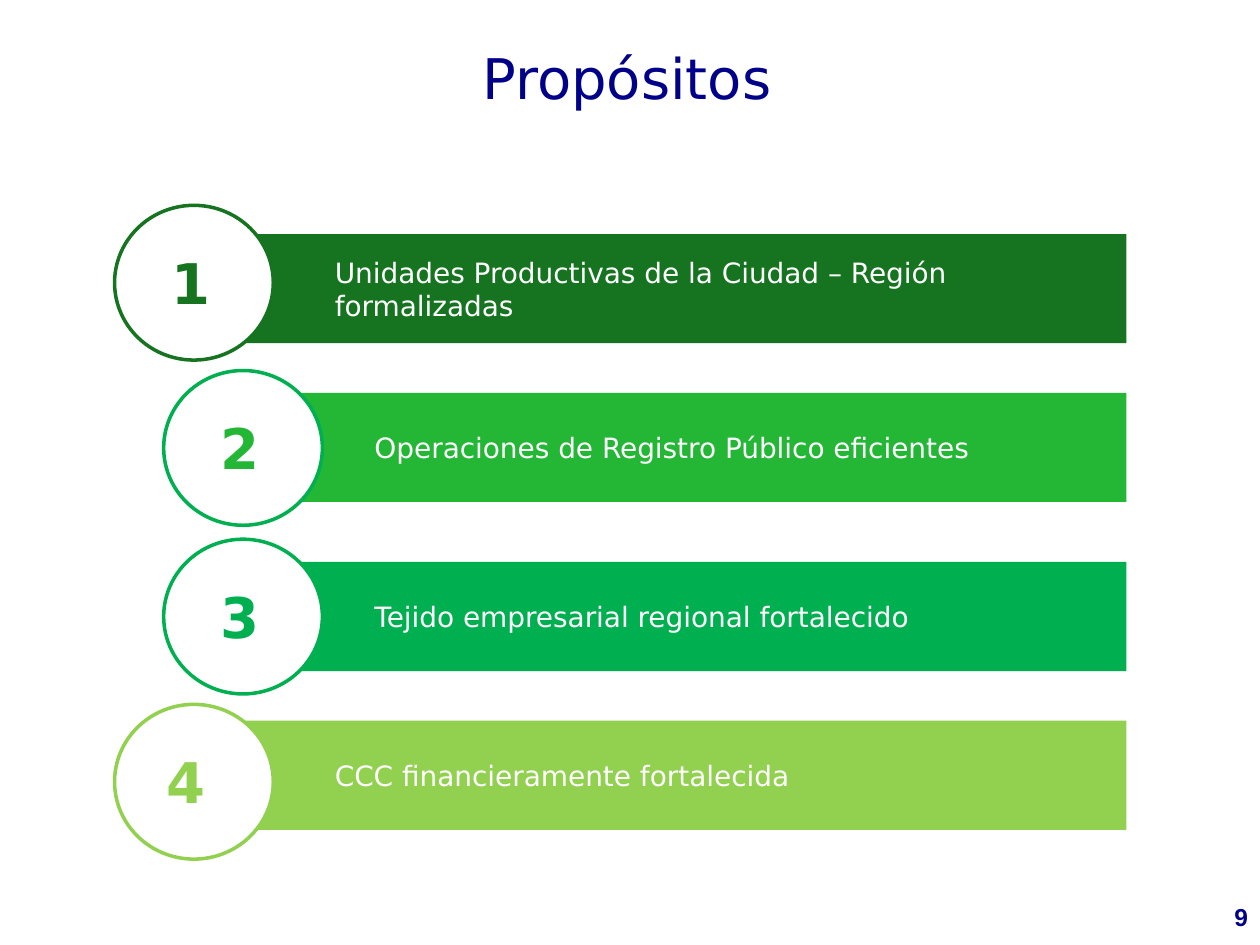
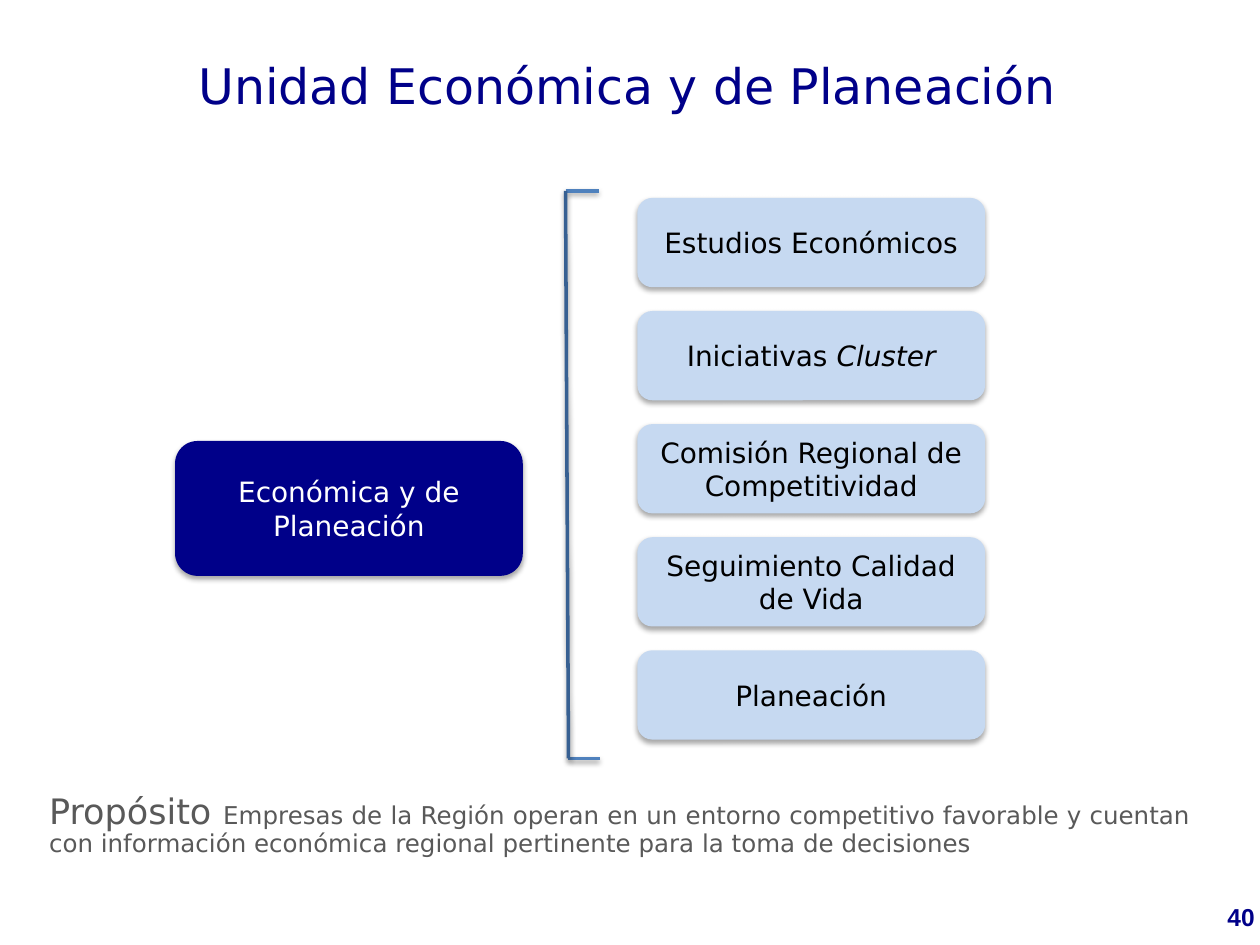
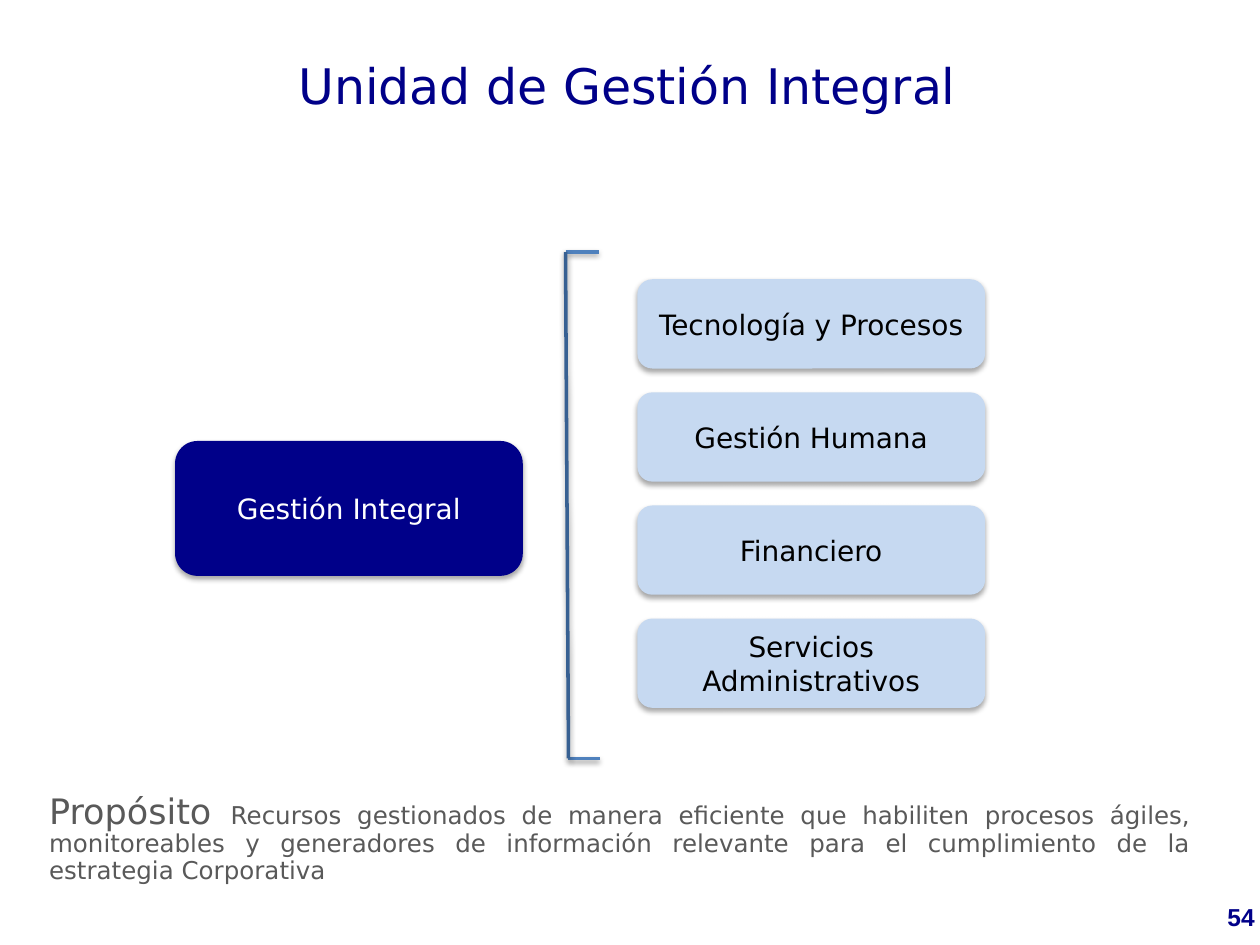
from lxml import etree
from pptx import Presentation
from pptx.dml.color import RGBColor
from pptx.enum.shapes import MSO_CONNECTOR, MSO_SHAPE
from pptx.enum.text import MSO_ANCHOR, MSO_AUTO_SIZE, PP_ALIGN
from pptx.oxml.ns import qn
from pptx.util import Cm, Pt

LEFT, CENTER, JUSTIFY = PP_ALIGN.LEFT, PP_ALIGN.CENTER, PP_ALIGN.JUSTIFY
TOP, MIDDLE = MSO_ANCHOR.TOP, MSO_ANCHOR.MIDDLE
RECT, ROUNDED = MSO_SHAPE.RECTANGLE, MSO_SHAPE.ROUNDED_RECTANGLE
CIRCLE = MSO_SHAPE.FLOWCHART_CONNECTOR
STRAIGHT = MSO_CONNECTOR.STRAIGHT

# Colours
NAVY = RGBColor(0x00, 0x00, 0x89)
WHITE = RGBColor(0xFF, 0xFF, 0xFF)
BLACK = RGBColor(0x00, 0x00, 0x00)
GREY = RGBColor(0x59, 0x59, 0x59)
PALE_BLUE = RGBColor(0xC6, 0xD9, 0xF1)
ARM_BLUE = RGBColor(0x4F, 0x81, 0xBD)
SPINE_BLUE = RGBColor(0x37, 0x60, 0x92)
DARK_GREEN = RGBColor(0x16, 0x74, 0x21)
GREEN = RGBColor(0x23, 0xB7, 0x35)
EMERALD = RGBColor(0x00, 0xB0, 0x50)
LIME = RGBColor(0x92, 0xD0, 0x50)

# Text formats
BASE = {"name": "DejaVu Sans", "size": Pt(16), "bold": False, "italic": False}
NUMERAL = {"size": Pt(32), "bold": True}
PAGE_NUMBER = {"name": "Arial", "size": Pt(14), "bold": True}

# Content: lengths in cm
PURPOSES = {
    "title": "Propósitos", "page": "9",
    # caption, bar colour, ring colour, bar top, circle top, circle left, numeral left, caption left
    "rows": [
        ("Unidades Productivas de la Ciudad – Región formalizadas",
         DARK_GREEN, DARK_GREEN, 4.72, 4.14, 2.31, 3.2, 6.5),
        ("Operaciones de Registro Público eficientes",
         GREEN, EMERALD, 7.92, 7.47, 3.3, 4.19, 7.3),
        ("Tejido empresarial regional fortalecido",
         EMERALD, EMERALD, 11.33, 10.87, 3.3, 4.19, 7.3),
        ("CCC financieramente fortalecida",
         LIME, LIME, 14.53, 14.2, 2.31, 3.1, 6.5),
    ],
}
UNITS = [
    {
        "title": "Unidad Económica y de Planeación", "page": "40",
        "unit": "Económica y de Planeación",
        "areas": [
            [("Estudios Económicos", {})],
            [("Iniciativas ", {}), ("Cluster", {"italic": True})],
            [("Comisión Regional de Competitividad", {})],
            [("Seguimiento Calidad de Vida", {})],
            [("Planeación", {})],
        ],
        "bracket_top": 3.85, "areas_top": 3.99,
        "purpose": "Empresas de la Región operan en un entorno competitivo favorable y "
                   "cuentan con información económica regional pertinente para la toma "
                   "de decisiones",
    },
    {
        "title": "Unidad de Gestión Integral", "page": "54",
        "unit": "Gestión Integral",
        "areas": [[(area, {})] for area in (
            "Tecnología y Procesos", "Gestión Humana", "Financiero",
            "Servicios Administrativos")],
        "bracket_top": 5.08, "areas_top": 5.63,
        "purpose": "Recursos gestionados de manera eficiente que habiliten procesos ágiles, "
                   "monitoreables y generadores de información relevante para el "
                   "cumplimiento de la estrategia Corporativa",
    },
]

# Shared measures
BAR_LEFT, BAR_WIDTH, BAR_HEIGHT = 4.7, 18.01, 2.2
CIRCLE_WIDTH, CIRCLE_HEIGHT = 3.2, 3.12
AREA_HEIGHT, AREA_PITCH = 1.8, 2.28
BRACKET_BOTTOM = 15.29


def cm(*lengths):
    return [Cm(length) for length in lengths]


def write(frame, runs, color, align=LEFT, anchor=TOP, spacing=None, **common):
    frame.word_wrap = True
    frame.auto_size = MSO_AUTO_SIZE.NONE
    frame.vertical_anchor = anchor
    paragraph = frame.paragraphs[0]
    paragraph.alignment = align
    paragraph.line_spacing = spacing
    for text, own in runs:
        run = paragraph.add_run()
        run.text = text
        for attribute, value in {**BASE, **common, **own}.items():
            setattr(run.font, attribute, value)
        run.font.color.rgb = color


def add_text(slide, box, runs, color, **layout):
    frame = slide.shapes.add_textbox(*cm(*box)).text_frame
    write(frame, runs, color, **layout)
    return frame


def set_shadow(part, distance=None, opacity=0):
    """Give the part a soft shadow below it, or none."""
    effects = etree.SubElement(part._element.spPr, qn("a:effectLst"))
    if distance:
        shadow = etree.SubElement(effects, qn("a:outerShdw"), blurRad=str(Pt(3.1)),
                                  dist=str(Pt(distance)), dir="5400000", rotWithShape="0")
        black = etree.SubElement(shadow, qn("a:srgbClr"), val="000000")
        etree.SubElement(black, qn("a:alpha"), val=str(opacity * 1000))


def add_block(slide, preset, box, fill, ring=None, shadow=()):
    block = slide.shapes.add_shape(preset, *cm(*box))
    block.fill.solid()
    block.fill.fore_color.rgb = fill
    if ring is None:
        block.line.fill.background()
    else:
        block.line.color.rgb = ring
        block.line.width = Pt(2)
    set_shadow(block, *shadow)
    return block


def add_labelled_box(slide, box, runs, fill, color):
    block = add_block(slide, ROUNDED, box, fill, shadow=(1.8, 35))
    write(block.text_frame, runs, color, align=CENTER, anchor=MIDDLE)


def add_slide(prs, content, title_top, title_height, title_size):
    """Start a slide with its title and page number."""
    slide = prs.slides.add_slide(prs.slide_layouts[5])
    title = slide.shapes.title
    title.left, title.top, title.width, title.height = cm(1.68, title_top, 21.92, title_height)
    write(title.text_frame, [(content["title"], {"size": Pt(title_size)})], NAVY,
          align=CENTER, anchor=MIDDLE, spacing=0.9)
    page = add_text(slide, (24.64, 18.06, 0.76, 0.86), [(content["page"], PAGE_NUMBER)],
                    NAVY, align=CENTER, anchor=MIDDLE)
    page.margin_left = page.margin_right = 0
    return slide


def add_purposes_slide(prs):
    slide = add_slide(prs, PURPOSES, 0.89, 1.5, 32)
    for number, row in enumerate(PURPOSES["rows"], 1):
        caption, fill, ring, bar_top, circle_top, circle_left, numeral_left, caption_left = row
        add_block(slide, RECT, (BAR_LEFT, bar_top, BAR_WIDTH, BAR_HEIGHT), fill)
        add_block(slide, CIRCLE, (circle_left, circle_top, CIRCLE_WIDTH, CIRCLE_HEIGHT),
                  WHITE, ring)
        add_text(slide, (numeral_left, circle_top + 0.75, 1.5, 1.62),
                 [(str(number), NUMERAL)], fill)
        add_text(slide, (caption_left, bar_top, 15.39, BAR_HEIGHT), [(caption, {})],
                 WHITE, anchor=MIDDLE)


def add_unit_slide(prs, content):
    slide = add_slide(prs, content, 1.12, 1.35, 28)

    # Bracket: two arms, then the spine
    top = content["bracket_top"]
    for ends, color in (
        ((11.4, top, 12.07, top), ARM_BLUE),
        ((12.09, BRACKET_BOTTOM, 11.46, BRACKET_BOTTOM), ARM_BLUE),
        ((11.4, top, 11.46, BRACKET_BOTTOM), SPINE_BLUE),
    ):
        stroke = slide.shapes.add_connector(STRAIGHT, *cm(*ends))
        stroke.line.color.rgb = color
        stroke.line.width = Pt(2)
        set_shadow(stroke, 1.6, 38)

    # Unit and its areas
    add_labelled_box(slide, (3.53, 8.89, 7.01, 2.72), [(content["unit"], {})], NAVY, WHITE)
    for index, area in enumerate(content["areas"]):
        area_top = content["areas_top"] + index * AREA_PITCH
        add_labelled_box(slide, (12.85, area_top, 7.01, AREA_HEIGHT), area, PALE_BLUE, BLACK)

    # Purpose
    add_text(slide, (0.74, 15.88, 23.52, 2.1),
             [("Propósito ", {"size": Pt(20)}), (content["purpose"], {"size": Pt(14)})],
             GREY, align=JUSTIFY, spacing=0.9)


def main():
    prs = Presentation()
    prs.slide_width, prs.slide_height = cm(25.4, 19.05)
    add_purposes_slide(prs)
    for content in UNITS:
        add_unit_slide(prs, content)
    prs.save("out.pptx")


if __name__ == "__main__":
    main()
